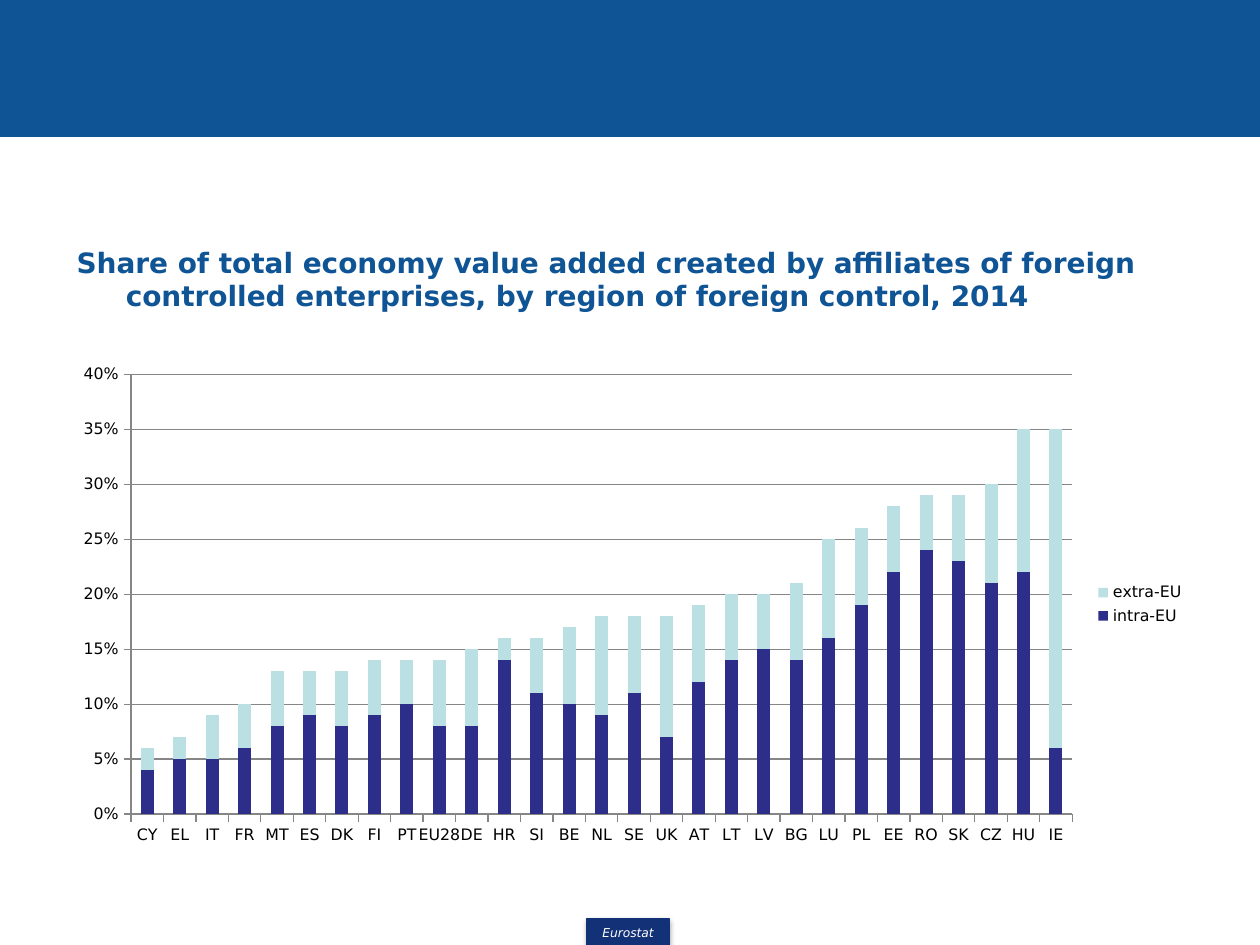
from lxml.etree import SubElement
from pptx import Presentation
from pptx.chart.data import CategoryChartData
from pptx.dml.color import RGBColor
from pptx.enum.chart import XL_CHART_TYPE as ChartType, XL_LEGEND_POSITION as LegendPosition
from pptx.enum.chart import XL_TICK_MARK as TickMark
from pptx.enum.shapes import MSO_SHAPE as Shape
from pptx.enum.text import MSO_ANCHOR as Anchor, PP_ALIGN as Align
from pptx.oxml import parse_xml
from pptx.oxml.ns import nsdecls, qn
from pptx.util import Inches, Pt

WIDTH, HEIGHT = Inches(10), Inches(7.5)
FONT = "DejaVu Sans"
COLORS = {"banner": "0F5494", "footer": "133176", "intra": "2D2D8A", "extra": "BBE0E3",
          "grid": "868686", "text": "000000", "white": "FFFFFF"}

COUNTRIES = ("CY EL IT FR MT ES DK FI PT EU28 DE HR SI BE NL SE UK AT LT LV BG LU PL "
             "EE RO SK CZ HU IE").split()
INTRA_PERCENT = [4, 5, 5, 6, 8, 9, 8, 9, 10, 8, 8, 14, 11, 10, 9, 11, 7, 12, 14, 15, 14,
                 16, 19, 22, 24, 23, 21, 22, 6]
EXTRA_PERCENT = [2, 2, 4, 4, 5, 4, 5, 5, 4, 6, 7, 2, 5, 7, 9, 7, 11, 7, 6, 5, 7, 9, 7, 6,
                 5, 6, 9, 13, 29]


def color(name):
    return RGBColor.from_string(COLORS[name])


def share_box(left, top, width, height):
    """Turn shares of the slide into a box of lengths."""
    return (int(left * WIDTH), int(top * HEIGHT), int(width * WIDTH), int(height * HEIGHT))


def style_font(font, size, color_name, bold=False, italic=False):
    font.name, font.size = FONT, Pt(size)
    font.bold, font.italic = bold, italic
    font.color.rgb = color(color_name)


def add_block(slide, box, color_name):
    block = slide.shapes.add_shape(Shape.RECTANGLE, *box)
    block.shadow.inherit = False
    block.fill.solid()
    block.fill.fore_color.rgb = color(color_name)
    block.line.color.rgb = color(color_name)
    block.line.width = Pt(0.75)
    return block


def add_footer(slide, box):
    footer = add_block(slide, box, "footer")
    effects = footer._element.spPr.find(qn("a:effectLst"))
    effects.append(parse_xml(
        f'<a:outerShdw {nsdecls("a")} blurRad="{Pt(3.1)}" dist="{Pt(1.8)}" dir="5400000" '
        'rotWithShape="0"><a:srgbClr val="000000"><a:alpha val="35000"/></a:srgbClr>'
        '</a:outerShdw>'))
    frame = footer.text_frame
    frame.margin_left = frame.margin_right = frame.margin_top = frame.margin_bottom = 0
    frame.vertical_anchor = Anchor.MIDDLE
    label = frame.paragraphs[0]
    label.text = "Eurostat"
    label.alignment = Align.CENTER
    style_font(label.font, 7, "white", italic=True)


def add_title(slide, box):
    frame = slide.shapes.add_textbox(*box).text_frame
    frame.word_wrap = True
    frame.vertical_anchor = Anchor.MIDDLE
    title = frame.paragraphs[0]
    title.text = ("Share of total economy value added created by affiliates of foreign "
                  "controlled enterprises, by region of foreign control, 2014")
    hanging = Inches(0.39)
    properties = title._p.get_or_add_pPr()
    properties.set("marL", str(hanging))
    properties.set("indent", str(-hanging))
    style_font(title.font, 16, "banner", bold=True)


def fix_plot_area(chart, **shares):
    """Place the inner plot area at shares (x, y, w, h) of the chart."""
    plot_area = chart._chartSpace.chart.plotArea
    layout = plot_area.find(qn("c:layout"))
    if layout is None:
        layout = plot_area.makeelement(qn("c:layout"))
        plot_area.insert(0, layout)
    manual = SubElement(layout, qn("c:manualLayout"))
    settings = {"layoutTarget": "inner", "xMode": "edge", "yMode": "edge", **shares}
    for tag, value in settings.items():
        SubElement(manual, qn(f"c:{tag}")).set("val", str(value))


def add_share_chart(slide, box):
    data = CategoryChartData(number_format="0%")
    data.categories = COUNTRIES
    for name, percents in (("intra-EU", INTRA_PERCENT), ("extra-EU", EXTRA_PERCENT)):
        data.add_series(name, [percent / 100 for percent in percents])
    chart = slide.shapes.add_chart(ChartType.COLUMN_STACKED, *box, data).chart
    chart.has_title = False
    style_font(chart.font, 9, "text")
    fix_plot_area(chart, x=0.06, y=0.04, w=0.83, h=0.88)

    plot = chart.plots[0]
    plot.gap_width, plot.overlap = 150, 100
    plot.vary_by_categories = False
    for series, color_name in zip(plot.series, ("intra", "extra")):
        series.format.fill.solid()
        series.format.fill.fore_color.rgb = color(color_name)

    shares = chart.value_axis
    shares.minimum_scale, shares.maximum_scale, shares.major_unit = 0, 0.4, 0.05
    shares.tick_labels.number_format = "0%"
    shares.tick_labels.number_format_is_linked = False
    shares.has_major_gridlines = True
    for axis in (shares, chart.category_axis):
        axis.major_tick_mark = TickMark.OUTSIDE
    for lines in (shares, shares.major_gridlines, chart.category_axis):
        lines.format.line.color.rgb = color("grid")
        lines.format.line.width = Pt(0.75)

    chart.has_legend = True
    chart.legend.position = LegendPosition.RIGHT
    chart.legend.include_in_layout = False


def main():
    deck = Presentation()
    deck.slide_width, deck.slide_height = WIDTH, HEIGHT
    slide = deck.slides.add_slide(deck.slide_layouts[6])
    add_block(slide, share_box(0, 0, 1, 0.144), "banner")
    add_footer(slide, share_box(0.466, 0.972, 0.065, 0.029))
    add_title(slide, share_box(0.051, 0.227, 0.9, 0.136))
    add_share_chart(slide, share_box(0.05, 0.375, 0.9, 0.529))
    deck.save("out.pptx")


if __name__ == "__main__":
    main()
